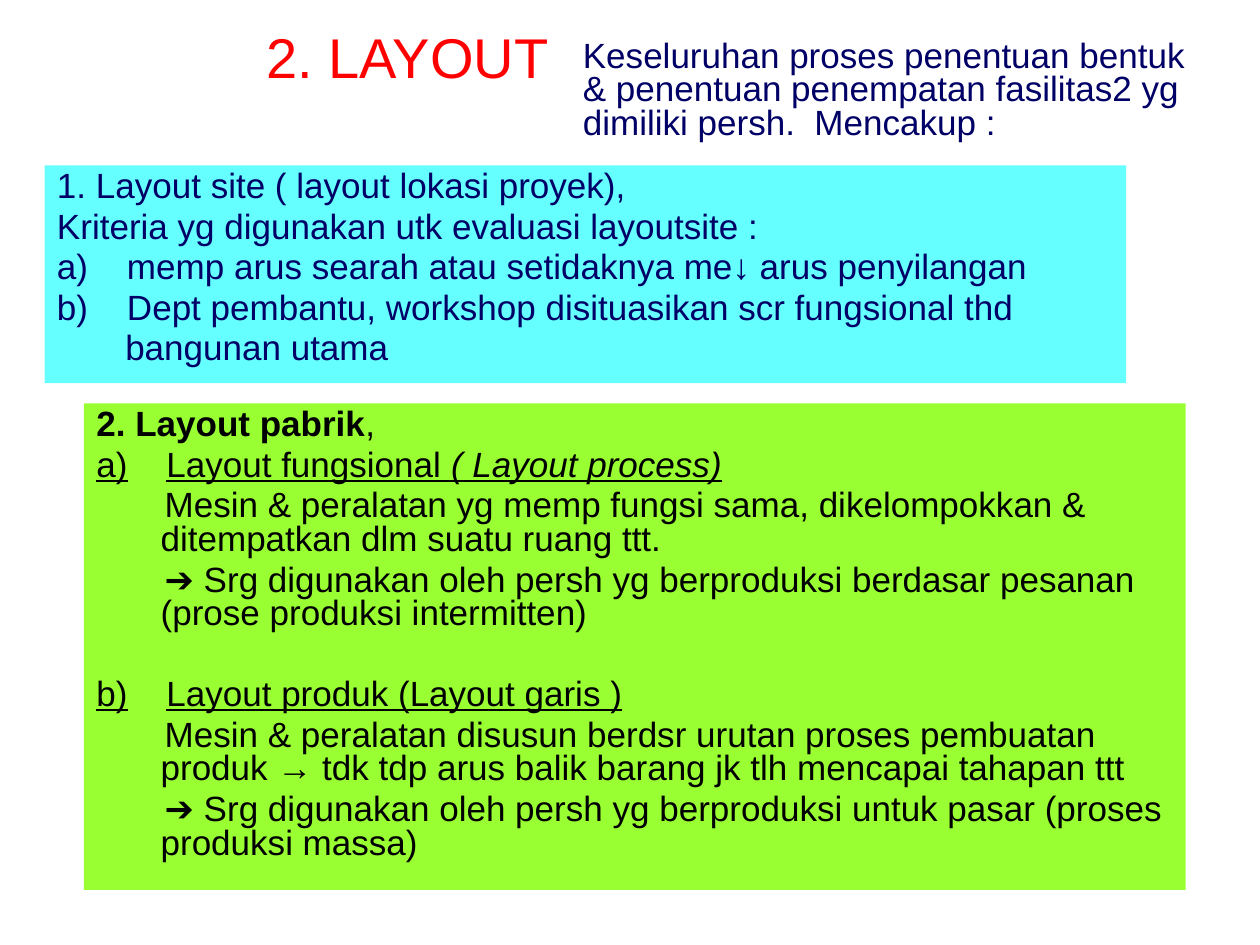
from dataclasses import dataclass
from pptx import Presentation
from pptx import util as u
from pptx.dml.color import RGBColor
from pptx.enum import shapes, text


@dataclass
class Theme:
    font: str = "Arial"
    red: str = "FF0000"
    navy: str = "000066"
    black: str = "000000"
    cyan: str = "66FFFF"
    lime: str = "99FF33"
    head: int = 32
    body: int = 20
    lines: float = 0.8
    gap: int = 4
    wide: int = 27


class Page:
    """Holds the theme and the slide, and adds each kind of element."""

    def __init__(self, deck, theme):
        self.theme = theme
        self.slide = deck.slides.add_slide(deck.slide_layouts[5])

    def place(self, shape, box):
        names = ("left", "top", "width", "height")
        for name, size in zip(names, box):
            setattr(shape, name, u.Pt(size))

    def fill_text(self, shape, rows, color, size, lines):
        frame = shape.text_frame
        frame.word_wrap = True
        for i, (kind, runs) in enumerate(rows):
            para = frame.paragraphs[0] if i == 0 else frame.add_paragraph()
            left, first, gap = KINDS[kind]
            props = para._p.get_or_add_pPr()
            props.set("marL", str(u.Pt(left)))
            props.set("indent", str(u.Pt(first)))
            form = {
                "alignment": text.PP_ALIGN.LEFT,
                "line_spacing": lines,
                "space_before": u.Pt(gap if i else 0),
            }
            for name, value in form.items():
                setattr(para, name, value)
            for words, marks in runs:
                run = para.add_run()
                run.text = words
                form = {"name": self.theme.font, "size": u.Pt(size), **marks}
                for name, value in form.items():
                    setattr(run.font, name, value)
                run.font.color.rgb = RGBColor.from_string(color)

    def title(self, words, box):
        shape = self.slide.shapes.title
        self.place(shape, box)
        shape.text_frame.vertical_anchor = text.MSO_ANCHOR.MIDDLE
        rows = [("plain", [(words, {})])]
        self.fill_text(shape, rows, self.theme.red, self.theme.head, 1.0)

    def note(self, words, box):
        shape = self.slide.shapes.add_textbox(*map(u.Pt, box))
        rows = [("plain", [(words, {})])]
        self.fill_text(shape, rows, self.theme.navy, self.theme.body, self.theme.lines)

    def panel(self, rows, box, fill, color):
        kind = shapes.MSO_SHAPE.RECTANGLE
        shape = self.slide.shapes.add_shape(kind, *map(u.Pt, box))
        shape.shadow.inherit = False
        shape.fill.solid()
        shape.fill.fore_color.rgb = RGBColor.from_string(fill)
        shape.line.fill.background()
        shape.text_frame.vertical_anchor = text.MSO_ANCHOR.TOP
        self.fill_text(shape, rows, color, self.theme.body, self.theme.lines)


THEME = Theme()
KINDS = {
    "plain": (0, 0, THEME.gap),
    "item": (40, -40, THEME.gap),
    "next": (40, -40, THEME.wide),
    "rest": (39, 0, THEME.gap),
    "body": (36.7, 2.3, THEME.gap),
}
BOLD, LINE = {"bold": True}, {"underline": True}
SITE = [
    ("plain", [("1. Layout site ( layout lokasi proyek),", {})]),
    ("plain", [("Kriteria yg digunakan utk evaluasi layoutsite :", {})]),
    ("item", [("a)\tmemp arus searah atau setidaknya me↓ arus penyilangan", {})]),
    ("item", [("b)\tDept pembantu, workshop disituasikan scr fungsional thd", {})]),
    ("rest", [("bangunan utama", {})]),
]
PLANT = [
    ("plain", [("2. Layout pabrik", BOLD), (",", {})]),
    ("item", [("a)\tLayout fungsional ", LINE),
              ("( Layout process)", {"italic": True, **LINE})]),
    ("body", [("Mesin & peralatan yg memp fungsi sama, dikelompokkan & "
               "ditempatkan dlm suatu ruang ttt.", {})]),
    ("body", [("➔ Srg digunakan oleh persh yg berproduksi berdasar pesanan "
               "(prose produksi intermitten)", {})]),
    ("next", [("b)\tLayout produk (Layout garis )", LINE)]),
    ("body", [("Mesin & peralatan disusun berdsr urutan proses pembuatan "
               "produk → tdk tdp arus balik barang jk tlh mencapai tahapan ttt", {})]),
    ("body", [("➔ Srg digunakan oleh persh yg berproduksi untuk pasar "
               "(proses produksi massa)", {})]),
]


def main():
    deck = Presentation()
    deck.slide_width, deck.slide_height = u.Pt(720), u.Pt(540)
    page = Page(deck, THEME)
    page.title("2. LAYOUT", (145, 15, 227, 34))
    page.panel(SITE, (25.5, 94.5, 618, 124.5), THEME.cyan, THEME.navy)
    page.panel(PLANT, (48, 230.5, 629.5, 278), THEME.lime, THEME.black)
    page.note("Keseluruhan proses penentuan bentuk & penentuan penempatan "
              "fasilitas2 yg dimiliki persh.  Mencakup :", (326, 20, 374.5, 73.5))
    deck.save("out.pptx")


if __name__ == "__main__":
    main()
